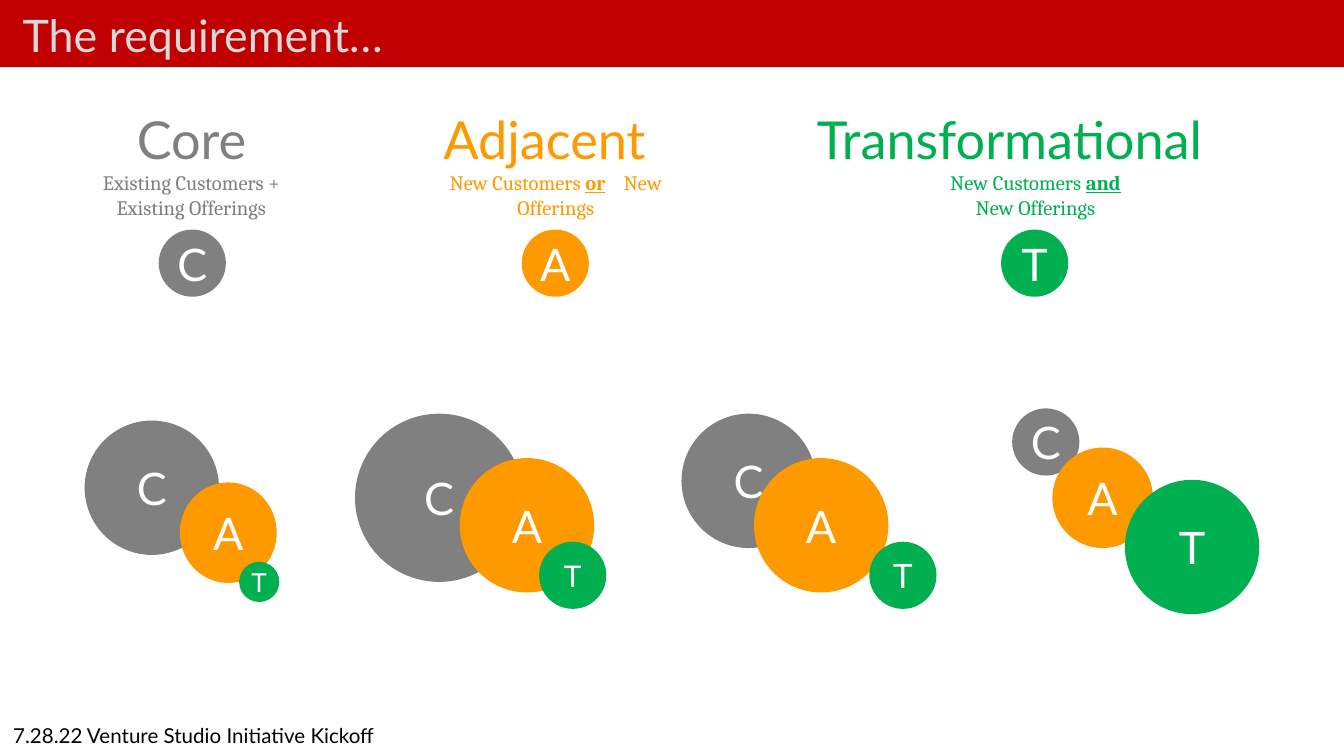
"""Build the slide on core, adjacent and transformational offerings."""
from typing import NamedTuple

from pptx import Presentation
from pptx import util as u
from pptx.dml.color import RGBColor
from pptx.enum import shapes, text

GREY, ORANGE, GREEN = "808080", "FF9900", "00B050"
COLOURS = {"C": GREY, "A": ORANGE, "T": GREEN}


class Circle(NamedTuple):
    letter: str
    left: float
    top: float
    width: float
    height: float
    size: int = 24


class Piece(NamedTuple):
    words: str
    stressed: bool = False
    spacing: int = 0


class Category(NamedTuple):
    name: str
    alignment: text.PP_ALIGN
    left: float
    width: float
    circle: Circle
    lines: list[list[Piece]]


CENTRE, LEFT = text.PP_ALIGN.CENTER, text.PP_ALIGN.LEFT

CATEGORIES = [
    Category("Core", CENTRE, 1.45, 4.34, Circle("C", 3, 4.34, 1.27, 1.27),
             [[Piece("Existing Customers + Existing Offerings")]]),
    Category("Adjacent", LEFT, 8.13, 4.75, Circle("A", 9.86, 4.34, 1.27, 1.27),
             [[Piece("New Customers "), Piece("or", True),
               Piece(" ", spacing=730), Piece("New Offerings")]]),
    Category("Transformational", LEFT, 15.19, 8.76, Circle("T", 18.92, 4.34, 1.27, 1.27),
             [[Piece("New Customers "), Piece("and", True)],
              [Piece("New Offerings")]]),
]

CLUSTERS = [
    [Circle("C", 1.6, 7.95, 2.54, 2.54), Circle("A", 3.4, 9.12, 1.83, 1.9),
     Circle("T", 4.52, 10.62, 0.76, 0.76, 14)],
    [Circle("C", 6.71, 7.82, 3.18, 3.18), Circle("A", 8.69, 8.66, 2.54, 2.54),
     Circle("T", 10.19, 10.24, 1.27, 1.27, 16)],
    [Circle("C", 19.13, 7.72, 1.27, 1.27), Circle("A", 19.89, 8.46, 1.9, 1.9),
     Circle("T", 21.26, 9.07, 2.54, 2.54)],
    [Circle("C", 12.88, 7.82, 2.54, 2.54), Circle("A", 14.25, 8.66, 2.54, 2.54),
     Circle("T", 16.43, 10.24, 1.27, 1.27, 18)],
]


def colour(value: str) -> RGBColor:
    return RGBColor.from_string(value)


def style(font, name: str, size: float, value: str) -> None:
    font.name, font.size = name, u.Pt(size)
    font.color.rgb = colour(value)


def add_filled(container, kind, left: float, top: float, width: float,
               height: float, value: str):
    shape = container.add_shape(kind, u.Cm(left), u.Cm(top), u.Cm(width), u.Cm(height))
    shape.shadow.inherit = False
    shape.fill.solid()
    shape.fill.fore_color.rgb = colour(value)
    shape.line.fill.background()
    return shape


def add_circle(container, circle: Circle) -> None:
    shape = add_filled(container, shapes.MSO_SHAPE.OVAL, circle.left, circle.top,
                       circle.width, circle.height, COLOURS[circle.letter])
    frame = shape.text_frame
    frame.margin_left = frame.margin_right = 0
    frame.vertical_anchor = text.MSO_ANCHOR.MIDDLE
    frame.text = circle.letter
    paragraph = frame.paragraphs[0]
    paragraph.alignment = CENTRE
    style(paragraph.runs[0].font, "Lato", circle.size, "FFFFFF")


def add_label(container, words: str, left: float, top: float, width: float,
              height: float, size: float, value: str):
    box = container.add_textbox(u.Cm(left), u.Cm(top), u.Cm(width), u.Cm(height))
    frame = box.text_frame
    frame.word_wrap = True
    frame.text = words
    style(frame.paragraphs[0].runs[0].font, "Lato", size, value)
    return frame


def add_category(container, category: Category) -> None:
    value = COLOURS[category.circle.letter]
    add_circle(container, category.circle)
    frame = add_label(container, category.name, category.left, 1.9,
                      category.width, 2.39, 28, value)
    frame.paragraphs[0].alignment = category.alignment
    for line in category.lines:
        paragraph = frame.add_paragraph()
        paragraph.alignment = CENTRE
        for piece in line:
            run = paragraph.add_run()
            run.text = piece.words
            style(run.font, "Cambria", 11, value)
            if piece.stressed:
                run.font.bold = run.font.underline = True
            if piece.spacing:
                run.font._element.set("spc", str(piece.spacing))


def main() -> None:
    presentation = Presentation()
    presentation.slide_width, presentation.slide_height = u.Cm(25.4), u.Cm(14.29)
    slide = presentation.slides.add_slide(presentation.slide_layouts[6])
    add_filled(slide.shapes, shapes.MSO_SHAPE.RECTANGLE, 0, 0, 25.4, 1.27, "C00000")
    add_label(slide.shapes, "The requirement…", 0.18, 0.03, 23.19, 1.27, 24, "D9D9D9")
    add_label(slide.shapes, "7.28.22 Venture Studio Initiative Kickoff",
              0, 13.54, 23.19, 0.74, 11, "000000")
    for category in CATEGORIES:
        add_category(slide.shapes.add_group_shape().shapes, category)
    for cluster in CLUSTERS:
        group = slide.shapes.add_group_shape()
        for circle in cluster:
            add_circle(group.shapes, circle)
    presentation.save("out.pptx")


if __name__ == "__main__":
    main()
